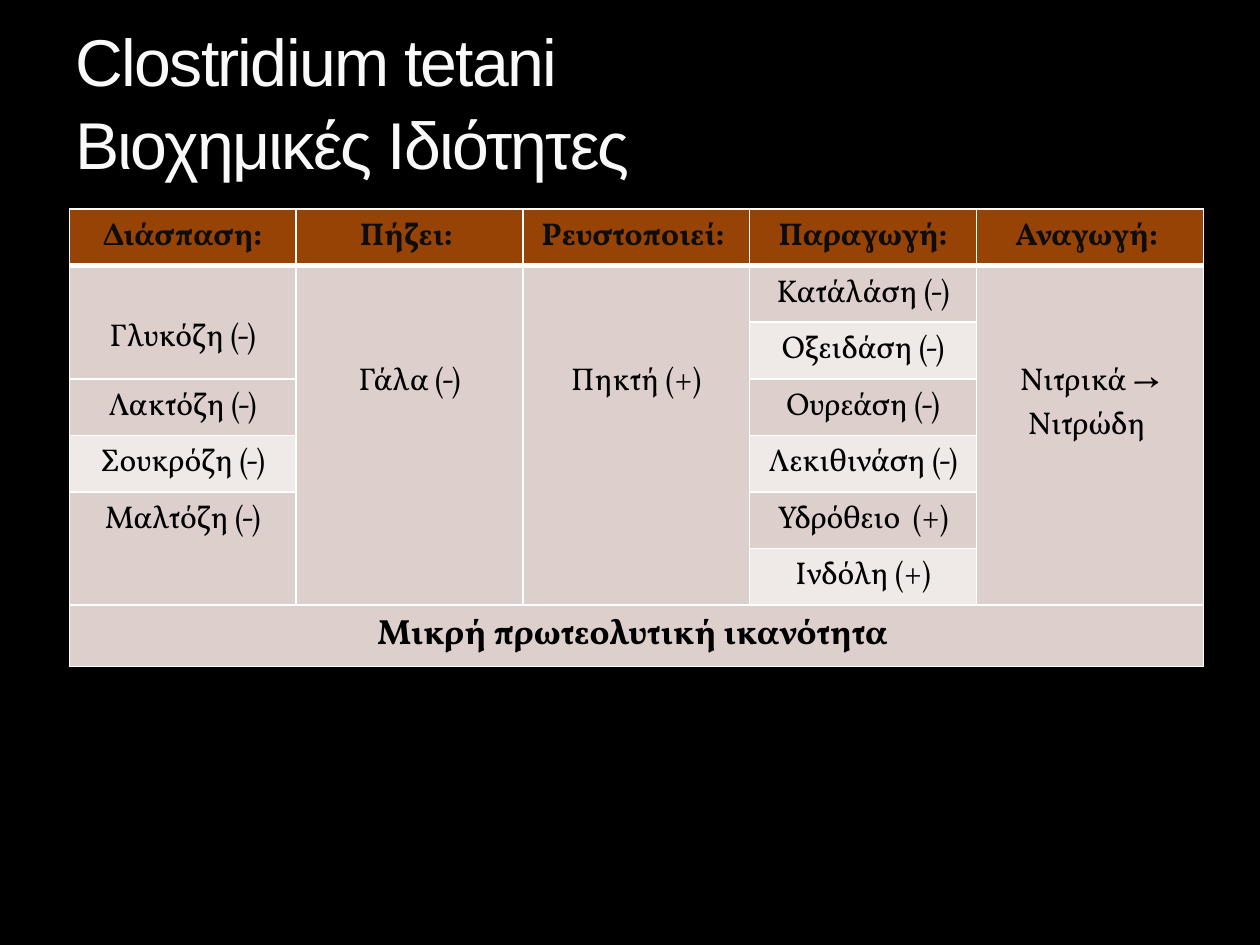
from lxml.etree import SubElement
from pptx import Presentation
from pptx.dml.color import RGBColor
from pptx.enum.text import MSO_ANCHOR, MSO_AUTO_SIZE, PP_ALIGN
from pptx.oxml.ns import qn
from pptx.util import Inches, Pt

# Content
TITLE_LINES = ["Clostridium tetani", "Βιοχημικές Ιδιότητες"]
HEADINGS = ["Διάσπαση:", "Πήζει: ", "Ρευστοποιεί: ", "Παραγωγή:", "Αναγωγή: "]
# Each column: (result, rows spanned, lines left free above the text)
RESULTS = [
    [("Γλυκόζη (-)", 2, 1), ("Λακτόζη (-)", 1, 0),
     ("Σουκρόζη (-)", 1, 0), ("Μαλτόζη (-)", 2, 0)],
    [("Γάλα (-)", 6, 2)],
    [("Πηκτή (+)", 6, 2)],
    [("Κατάλάση (-)", 1, 0), ("Οξειδάση (-)", 1, 0), ("Ουρεάση (-)", 1, 0),
     ("Λεκιθινάση (-)", 1, 0), ("Υδρόθειο  (+)", 1, 0), ("Ινδόλη (+)", 1, 0)],
    [("Νιτρικά → Νιτρώδη ", 6, 2)],
]
SUMMARY = "Μικρή πρωτεολυτική ικανότητα "

# Look
TABLE_FONT = "Vollkorn"
HEADER_FILL, BANDS = "964305", ["EFE9E7", "DDCFCC"]
ROWS, COLUMNS = 8, len(HEADINGS)
ROW_HEIGHT, COLUMN_WIDTH, LINE_HEIGHT = 0.41, 1.8, 0.35


def color(hex_value):
    return RGBColor.from_string(hex_value)


def add_borders(cell, row):
    widths = {"L": 1, "R": 1, "T": 3 if row == 1 else 1, "B": 3 if row == 0 else 1}
    properties = cell._tc.get_or_add_tcPr()
    for side, width in widths.items():
        line = SubElement(properties, qn(f"a:ln{side}"), w=str(Pt(width)))
        SubElement(SubElement(line, qn("a:solidFill")), qn("a:srgbClr"), val="FFFFFF")


def write_cell(cell, text, fill, size=18, bold=False, ink="000000", free_lines=0):
    cell.fill.solid()
    cell.fill.fore_color.rgb = color(fill)
    cell.margin_top = Inches(0.05 + free_lines * LINE_HEIGHT)
    paragraph = cell.text_frame.paragraphs[0]
    paragraph.alignment = PP_ALIGN.CENTER
    run = paragraph.add_run()
    run.text = text
    run.font.name, run.font.size, run.font.bold = TABLE_FONT, Pt(size), bold
    run.font.color.rgb = color(ink)


presentation = Presentation()
presentation.slide_width, presentation.slide_height = Inches(10), Inches(7.5)
slide = presentation.slides.add_slide(presentation.slide_layouts[5])
slide.background.fill.solid()
slide.background.fill.fore_color.rgb = color("000000")

# Title
title = slide.shapes.title
title.left, title.top = Inches(0.5), Inches(0.17)
title.width, title.height = Inches(9), Inches(1.33)
title.text_frame.auto_size = MSO_AUTO_SIZE.NONE
title.text_frame.vertical_anchor = MSO_ANCHOR.BOTTOM
heading = title.text_frame.paragraphs[0]
heading.alignment = PP_ALIGN.LEFT
heading.line_spacing = 1.04
for index, text in enumerate(TITLE_LINES):
    if index:
        heading.add_line_break()
    run = heading.add_run()
    run.text = text
    run.font.name, run.font.size = "Arial", Pt(37.8)
    run.font.color.rgb = color("F9F9F9")
    run.font._element.set("spc", "-100")
for line_break in heading._p.findall(qn("a:br")):
    SubElement(line_break, qn("a:rPr"), sz="3780")

# Table grid
table = slide.shapes.add_table(
    ROWS, COLUMNS, Inches(0.55), Inches(1.66),
    Inches(COLUMNS * COLUMN_WIDTH), Inches(ROWS * ROW_HEIGHT)).table
table.horz_banding = False
for row in range(ROWS):
    for column in range(COLUMNS):
        add_borders(table.cell(row, column), row)

# Header, results and summary
for column, (text, results) in enumerate(zip(HEADINGS, RESULTS)):
    write_cell(table.cell(0, column), text, HEADER_FILL, bold=True, ink="0D0D0D")
    row = 1
    for result, span, free_lines in results:
        cell = table.cell(row, column)
        if span > 1:
            cell.merge(table.cell(row + span - 1, column))
        write_cell(cell, result, BANDS[row % 2], free_lines=free_lines)
        row += span
summary_cell = table.cell(ROWS - 1, 0)
summary_cell.merge(table.cell(ROWS - 1, COLUMNS - 1))
write_cell(summary_cell, SUMMARY, BANDS[1], size=20, bold=True)

presentation.save("out.pptx")
